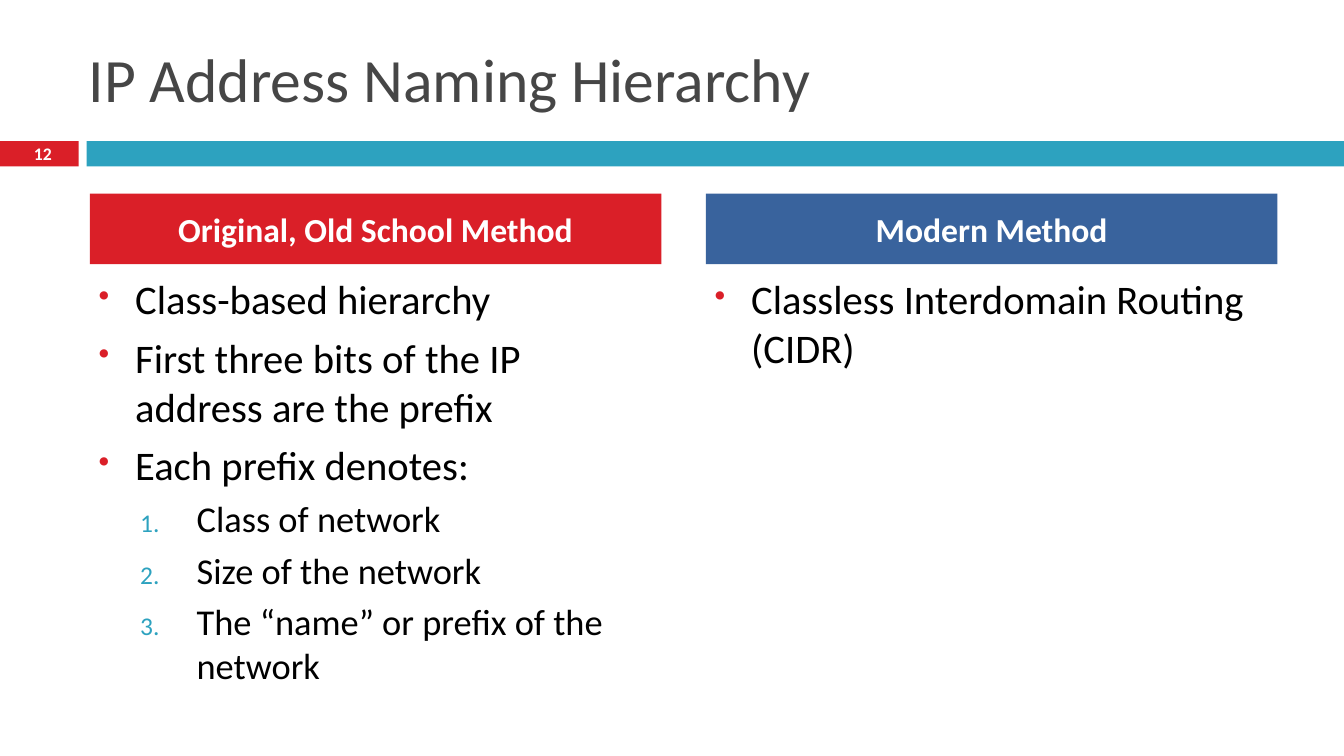
from lxml import etree
from pptx import Presentation
from pptx.dml.color import RGBColor
from pptx.enum import shapes, text
from pptx.oxml import ns
from pptx.util import Inches, Pt

RED = RGBColor(0xDA, 0x1F, 0x28)
TEAL = RGBColor(0x2D, 0xA2, 0xBF)
BLUE = RGBColor(0x39, 0x63, 0x9D)
GREY = RGBColor(0x46, 0x46, 0x46)
BLACK = RGBColor(0, 0, 0)
WHITE = RGBColor(0xFF, 0xFF, 0xFF)
FONT = "Calibri"
SLIDE_WIDTH, SLIDE_HEIGHT = 13.33, 7.5
COMPARISON_LAYOUT = 5 - 1

# Per level: text size, space before, left indent, hanging indent, marker colour, marker size
LEVELS = [
    (29, 7, 0.35, 0.35, RED, 60),
    (26, 5.5, 0.96, 0.56, TEAL, 70),
]
# Heading, heading colour, list of (level, text)
METHODS = [
    ("Original, Old School Method", RED, [
        (0, "Class-based hierarchy"),
        (0, "First three bits of the IP address are the prefix"),
        (0, "Each prefix denotes:"),
        (1, "Class of network"),
        (1, "Size of the network"),
        (1, "The “name” or prefix of the network"),
    ]),
    ("Modern Method", BLUE, [(0, "Classless Interdomain Routing (CIDR)")]),
]


def place(shape, left, top, width, height):
    shape.left, shape.top = Inches(left), Inches(top)
    shape.width, shape.height = Inches(width), Inches(height)


def prepare_frame(shape, anchor):
    frame = shape.text_frame
    frame.word_wrap = True
    frame.auto_size = text.MSO_AUTO_SIZE.NONE
    frame.vertical_anchor = anchor
    return frame


def style(paragraph, size, color, bold=False, align=text.PP_ALIGN.LEFT):
    paragraph.alignment = align
    font = paragraph.font
    font.name, font.size, font.bold = FONT, Pt(size), bold
    font.color.rgb = color


def write_line(shape, words, size, color, bold=False, align=text.PP_ALIGN.LEFT):
    frame = prepare_frame(shape, text.MSO_ANCHOR.MIDDLE)
    frame.text = words
    style(frame.paragraphs[0], size, color, bold, align)


def add_marker(paragraph, level):
    """Give a paragraph the indent, spacing and marker of its level."""
    size, before, indent, hanging, color, percent = LEVELS[level]
    paragraph.level = level
    paragraph.space_before = Pt(before)
    properties = paragraph._p.get_or_add_pPr()
    properties.set("marL", str(Inches(indent)))
    properties.set("indent", str(-Inches(hanging)))
    marker_color = etree.SubElement(properties, ns.qn("a:buClr"))
    etree.SubElement(marker_color, ns.qn("a:srgbClr"), val=str(color))
    etree.SubElement(properties, ns.qn("a:buSzPct"), val=str(percent * 1000))
    if level == 0:
        etree.SubElement(properties, ns.qn("a:buFont"), typeface="Wingdings 2")
        etree.SubElement(properties, ns.qn("a:buChar"), char="◻")
    else:
        etree.SubElement(properties, ns.qn("a:buFont"), typeface="+mj-lt")
        etree.SubElement(properties, ns.qn("a:buAutoNum"), type="arabicPeriod")
    style(paragraph, size, BLACK)


def build_band(slide, top, height, number):
    """Red number tab and teal bar across the slide."""
    tab_width, bar_left = 0.78, 0.86
    for left, width, color in ((0, tab_width, RED),
                               (bar_left, SLIDE_WIDTH - bar_left, TEAL)):
        bar = slide.shapes.add_shape(shapes.MSO_SHAPE.RECTANGLE, Inches(left),
                                     Inches(top), Inches(width), Inches(height))
        bar.shadow.inherit = False
        bar.fill.solid()
        bar.fill.fore_color.rgb = color
        bar.line.fill.background()
    label = slide.shapes.add_textbox(0, 0, 0, 0)
    place(label, -0.01, top - 0.02, 0.87, height + 0.04)
    write_line(label, number, 12.6, WHITE, True, text.PP_ALIGN.CENTER)


def build_method(heading, body, box, title, color, items):
    """Coloured heading with its list below."""
    left, top, width, height = box
    heading_height, list_offset = 0.7, 0.75
    place(heading, left, top, width, heading_height)
    heading.fill.solid()
    heading.fill.fore_color.rgb = color
    write_line(heading, title, 24, WHITE, True, text.PP_ALIGN.CENTER)
    heading.text_frame.paragraphs[0].space_before = Pt(7)

    place(body, left, top + list_offset, width, height - list_offset)
    frame = prepare_frame(body, text.MSO_ANCHOR.TOP)
    frame.text = "\n".join(words for _, words in items)
    for paragraph, (level, _) in zip(frame.paragraphs, items):
        add_marker(paragraph, level)


def build_slide(presentation):
    slide = presentation.slides.add_slide(presentation.slide_layouts[COMPARISON_LAYOUT])
    title, *parts = slide.placeholders
    # Title
    place(title, 0.78, 0.3, 11.89, 0.95)
    write_line(title, "IP Address Naming Hierarchy", 44, GREY)
    # Band with slide number
    build_band(slide, 1.4, 0.25, "12")
    # Two methods side by side
    width, gap = 5.67, 0.44
    for column, method in enumerate(METHODS):
        heading, body = parts[2 * column:2 * column + 2]
        box = (0.89 + column * (width + gap), 1.92, width, 4.67)
        build_method(heading, body, box, *method)


def main():
    presentation = Presentation()
    presentation.slide_width = Inches(SLIDE_WIDTH)
    presentation.slide_height = Inches(SLIDE_HEIGHT)
    build_slide(presentation)
    presentation.save("out.pptx")


if __name__ == "__main__":
    main()
